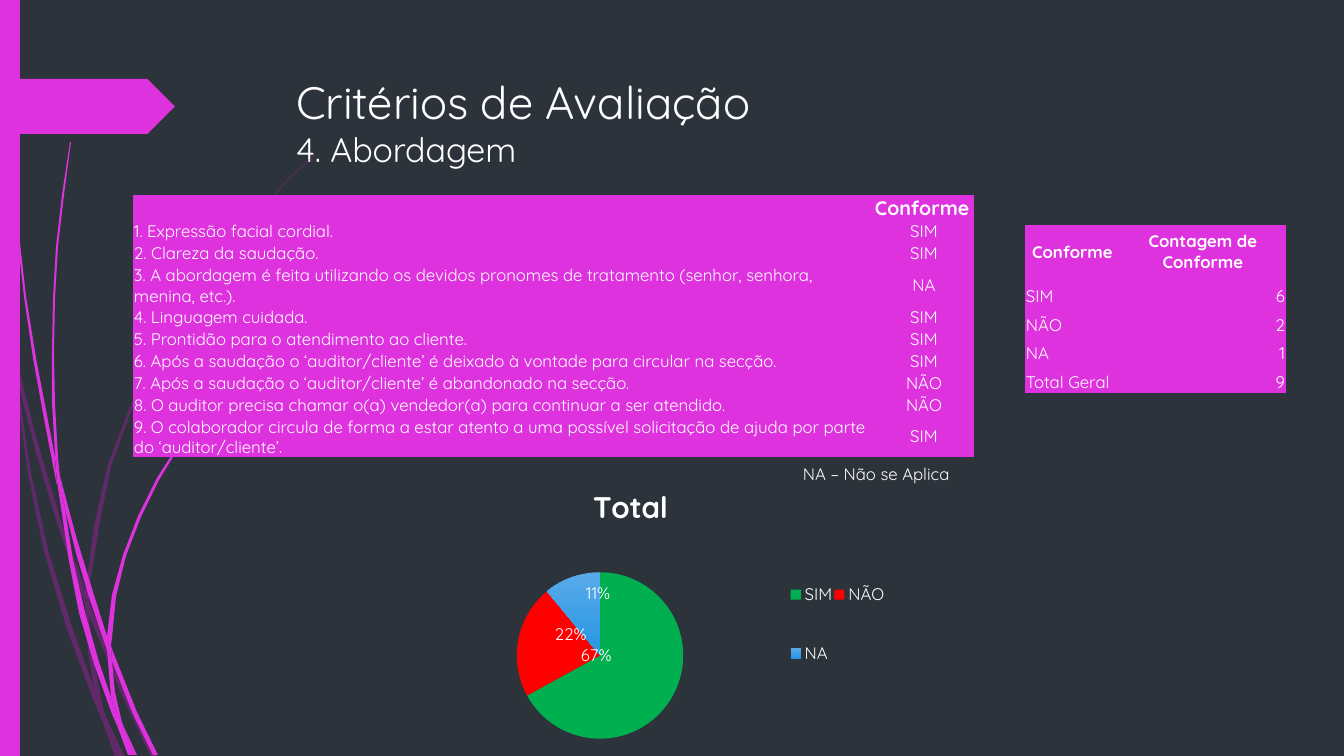
from lxml import etree
from pptx import Presentation
from pptx.chart.data import CategoryChartData
from pptx.dml.color import RGBColor
from pptx.enum.chart import XL_CHART_TYPE, XL_LABEL_POSITION, XL_LEGEND_POSITION
from pptx.enum.shapes import MSO_SHAPE
from pptx.enum.text import MSO_ANCHOR, PP_ALIGN
from pptx.oxml.ns import qn
from pptx.util import Pt

PIE = XL_CHART_TYPE.PIE
INSIDE_END = XL_LABEL_POSITION.INSIDE_END
LEGEND_RIGHT = XL_LEGEND_POSITION.RIGHT
RECTANGLE, PENTAGON = MSO_SHAPE.RECTANGLE, MSO_SHAPE.PENTAGON
TOP, MIDDLE, BOTTOM = MSO_ANCHOR.TOP, MSO_ANCHOR.MIDDLE, MSO_ANCHOR.BOTTOM
LEFT, CENTER, RIGHT = PP_ALIGN.LEFT, PP_ALIGN.CENTER, PP_ALIGN.RIGHT

EMU_PER_PX = 914400 / 100.8
FONT = "Quicksand"
WHITE, DARK, MAGENTA, PURPLE = "FFFFFF", "2C333A", "DE32DE", "B01CB0"
PLAIN_TABLE = "{2D5ABB26-0587-4C30-8999-92F81FD0307C}"

FAINT_WISPS = [
    [(11, 353), (9, 325), (0, 284), (0, 301), (10, 347)],
    [(58, 526), (85, 604), (86, 591), (62, 524), (36, 437), (14, 348), (17, 379), (36, 453)],
    [(93, 612), (89, 601), (89, 615), (124, 700), (151, 757), (156, 757), (128, 698)],
    [(120, 757), (125, 757), (106, 717)],
    [(94, 688), (71, 624), (48, 550), (31, 473), (17, 379), (11, 353), (28, 474), (44, 551),
     (66, 626), (93, 699), (102, 720), (100, 713)],
    [(85, 604), (88, 651), (94, 688), (97, 698), (106, 717), (104, 712), (92, 651), (89, 613)],
    [(89, 589), (99, 527), (111, 466), (132, 409), (161, 352), (194, 298), (231, 247), (270, 200),
     (292, 176), (315, 155), (315, 154), (291, 176), (270, 199), (230, 246), (193, 297), (159, 351),
     (130, 407), (108, 465), (94, 526), (86, 589), (85, 591), (89, 601)],
    [(102, 720), (115, 757), (120, 757)],
    [(89, 613), (89, 615), (89, 601), (86, 591), (85, 604)],
    [(97, 698), (94, 688), (100, 713), (102, 720), (120, 757), (106, 717)],
]
BRIGHT_WISPS = [
    [(7, 111), (11, 173), (17, 235), (24, 297), (33, 358), (44, 419), (56, 481), (57, 485),
     (55, 461), (55, 457), (36, 358), (26, 296), (19, 234), (12, 172), (8, 110), (5, 48),
     (4, 0), (3, 0), (4, 48)],
    [(89, 597), (107, 650), (107, 636), (94, 595), (76, 536), (60, 476), (65, 509), (76, 553)],
    [(114, 654), (111, 646), (112, 661), (133, 714), (153, 755), (158, 755), (137, 712)],
    [(111, 697), (99, 662), (85, 612), (73, 560), (65, 509), (57, 481), (69, 561), (79, 613),
     (94, 664), (112, 714), (118, 728), (117, 723)],
    [(60, 476), (58, 457), (55, 404), (54, 352), (55, 299), (58, 247), (64, 195), (71, 142),
     (70, 142), (62, 195), (56, 247), (53, 299), (52, 352), (52, 403), (55, 453)],
    [(134, 755), (137, 755), (123, 725)],
    [(57, 481), (65, 509), (60, 476), (55, 453), (55, 457)],
    [(112, 638), (116, 597), (126, 556), (141, 517), (159, 480), (181, 444), (207, 409), (233, 377),
     (247, 362), (263, 347), (262, 347), (247, 361), (233, 376), (206, 408), (180, 442), (157, 478),
     (138, 516), (123, 555), (112, 595), (107, 636), (111, 646)],
    [(118, 728), (128, 755), (132, 755)],
    [(107, 650), (111, 697), (117, 712), (123, 725), (122, 722), (115, 692), (112, 661), (110, 656)],
    [(107, 650), (110, 656), (112, 661), (111, 646), (107, 636)],
    [(117, 712), (111, 697), (117, 723), (118, 728), (131, 755), (134, 755), (123, 725)],
]
CRITERIA = [
    ("", "Conforme"),
    ("1. Expressão facial cordial.", "SIM"),
    ("2. Clareza da saudação.", "SIM"),
    ("3. A abordagem é feita utilizando os devidos pronomes de tratamento "
     "(senhor, senhora, menina, etc.).", "NA"),
    ("4. Linguagem cuidada.", "SIM"),
    ("5. Prontidão para o atendimento ao cliente.", "SIM"),
    ("6. Após a saudação o ‘auditor/cliente’ é deixado à vontade para circular na secção.", "SIM"),
    ("7. Após a saudação o ‘auditor/cliente’ é abandonado na secção.", "NÃO"),
    ("8. O auditor precisa chamar o(a) vendedor(a) para continuar a ser atendido.", "NÃO"),
    ("9. O colaborador circula de forma a estar atento a uma possível solicitação de ajuda "
     "por parte do ‘auditor/cliente’.", "SIM"),
]
COUNTS = [("Conforme", "Contagem de Conforme"), ("SIM", "6"), ("NÃO", "2"), ("NA", "1"),
          ("Total Geral", "9")]


def px(length):
    return round(length * EMU_PER_PX)


def place(box):
    return [px(length) for length in box]


def color(value):
    return RGBColor.from_string(value)


def style_font(font, size, bold=False):
    font.name, font.size, font.bold = FONT, Pt(size), bold
    font.color.rgb = color(WHITE)


def paint(shape, fill, opacity=100):
    shape.shadow.inherit = False
    shape.line.fill.background()
    shape.fill.solid()
    shape.fill.fore_color.rgb = color(fill)
    if opacity < 100:
        tint = shape.fill._xPr.find(".//" + qn("a:srgbClr"))
        etree.SubElement(tint, qn("a:alpha")).set("val", str(opacity * 1000))


def add_decoration(page):
    for wisps, fill, opacity in ((FAINT_WISPS, PURPLE, 40), (BRIGHT_WISPS, MAGENTA, 100)):
        for outline in wisps:
            start, *rest = [place(point) for point in outline]
            builder = page.shapes.build_freeform(*start)
            builder.add_line_segments(rest, close=True)
            paint(builder.convert_to_shape(), fill, opacity)
    for kind, box in ((RECTANGLE, (0, 0, 20, 756)), (PENTAGON, (0, 79, 175, 55))):
        paint(page.shapes.add_shape(kind, *place(box)), MAGENTA)


def set_title(page, box):
    title = page.shapes.title
    title.left, title.top, title.width, title.height = place(box)
    frame = title.text_frame
    frame.word_wrap, frame.vertical_anchor = True, TOP
    para = frame.paragraphs[0]
    para.alignment, para.line_spacing = LEFT, 1.0
    heading = para.add_run()
    heading.text = "Critérios de Avaliação"
    style_font(heading.font, 32.4)
    para.add_line_break()
    subheading = para.add_run()
    subheading.text = "4. Abordagem"
    style_font(subheading.font, 24.3)


def add_note(page, box):
    frame = page.shapes.add_textbox(*place(box)).text_frame
    frame.word_wrap = True
    para = frame.paragraphs[0]
    para.text = "NA – Não se Aplica"
    style_font(para.font, 12)


def add_grid(page, corner, columns, heights, rows, header_size, header_align, body_align, anchor):
    box = (*corner, sum(columns), sum(heights))
    frame = page.shapes.add_table(len(rows), len(columns), *place(box))
    frame._element.find(".//" + qn("a:tableStyleId")).text = PLAIN_TABLE
    table = frame.table
    for column, width in zip(table.columns, columns):
        column.width = px(width)
    for index, (row, height, texts) in enumerate(zip(table.rows, heights, rows)):
        row.height = px(height)
        header = index == 0
        for cell, text, align in zip(row.cells, texts, header_align if header else body_align):
            cell.fill.solid()
            cell.fill.fore_color.rgb = color(MAGENTA)
            cell.margin_left = cell.margin_right = cell.margin_top = px(1)
            cell.margin_bottom = 0
            cell.vertical_anchor = MIDDLE if header else anchor
            para = cell.text_frame.paragraphs[0]
            para.text, para.alignment = text, align
            style_font(para.font, header_size if header else 12, header)


def set_layout(parent, index, **settings):
    for old in parent.findall(qn("c:layout")):
        parent.remove(old)
    layout = parent.makeelement(qn("c:layout"), {})
    manual = etree.SubElement(layout, qn("c:manualLayout"))
    for name, value in settings.items():
        etree.SubElement(manual, qn("c:" + name)).set("val", str(value))
    parent.insert(index, layout)


def add_pie(page, box):
    data = CategoryChartData()
    data.categories = ["SIM", "NÃO", "NA"]
    data.add_series("Total", (67, 22, 11))
    chart = page.shapes.add_chart(PIE, *place(box), data).chart
    style_font(chart.font, 10)
    chart.has_title = True
    title = chart.chart_title.text_frame.paragraphs[0]
    title.text = "Total"
    style_font(title.font, 21.3, True)
    chart.has_legend = True
    legend = chart.legend
    legend.position, legend.include_in_layout = LEGEND_RIGHT, False
    style_font(legend.font, 12)
    edges = {"xMode": "edge", "yMode": "edge"}
    set_layout(legend._element, 1, **edges, x=0.76, y=0.27, w=0.16, h=0.54)
    set_layout(chart._chartSpace.chart.plotArea, 0, layoutTarget="inner", **edges,
               x=0.31, y=0.36, w=0.28, h=0.58)
    plot = chart.plots[0]
    plot.vary_by_categories = True
    series = plot.series[0]
    for index, fills in enumerate((["00B050"], ["FF0000"], ["59AAE9", "2596E3"])):
        point = series.points[index]
        fill = point.format.fill
        if len(fills) == 1:
            fill.solid()
            fill.fore_color.rgb = color(fills[0])
        else:
            fill.gradient()
            fill.gradient_angle = 270
            for stop, value in zip(fill.gradient_stops, fills):
                stop.color.rgb = color(value)
        style_font(point.data_label.font, 12)
        point.data_label.position = INSIDE_END
    offsets = ((-0.09, -0.1), (0.05, -0.06), (0.02, 0))
    for label, (x, y) in zip(series._element.iter(qn("c:dLbl")), offsets):
        set_layout(label, 1, x=x, y=y)
        label.find(qn("c:showVal")).set("val", "0")
        label.find(qn("c:showPercent")).set("val", "1")


def main():
    deck = Presentation()
    deck.slide_width, deck.slide_height = px(1344), px(756)
    page = deck.slides.add_slide(deck.slide_layouts[5])
    page.background.fill.solid()
    page.background.fill.fore_color.rgb = color(DARK)
    add_decoration(page)
    set_title(page, (286, 69, 983, 141))
    add_note(page, (793, 459, 180, 30))
    add_grid(page, (133, 195), (741, 100), (25, 22, 22, 41, 22, 22, 22, 22, 22, 41), CRITERIA,
             14, (LEFT, LEFT), (LEFT, CENTER), MIDDLE)
    add_grid(page, (1025, 225), (95, 166), (53, 29, 29, 28, 29), COUNTS,
             12, (CENTER, CENTER), (LEFT, RIGHT), BOTTOM)
    add_pie(page, (326, 469, 609, 287))
    deck.save("out.pptx")


if __name__ == "__main__":
    main()
